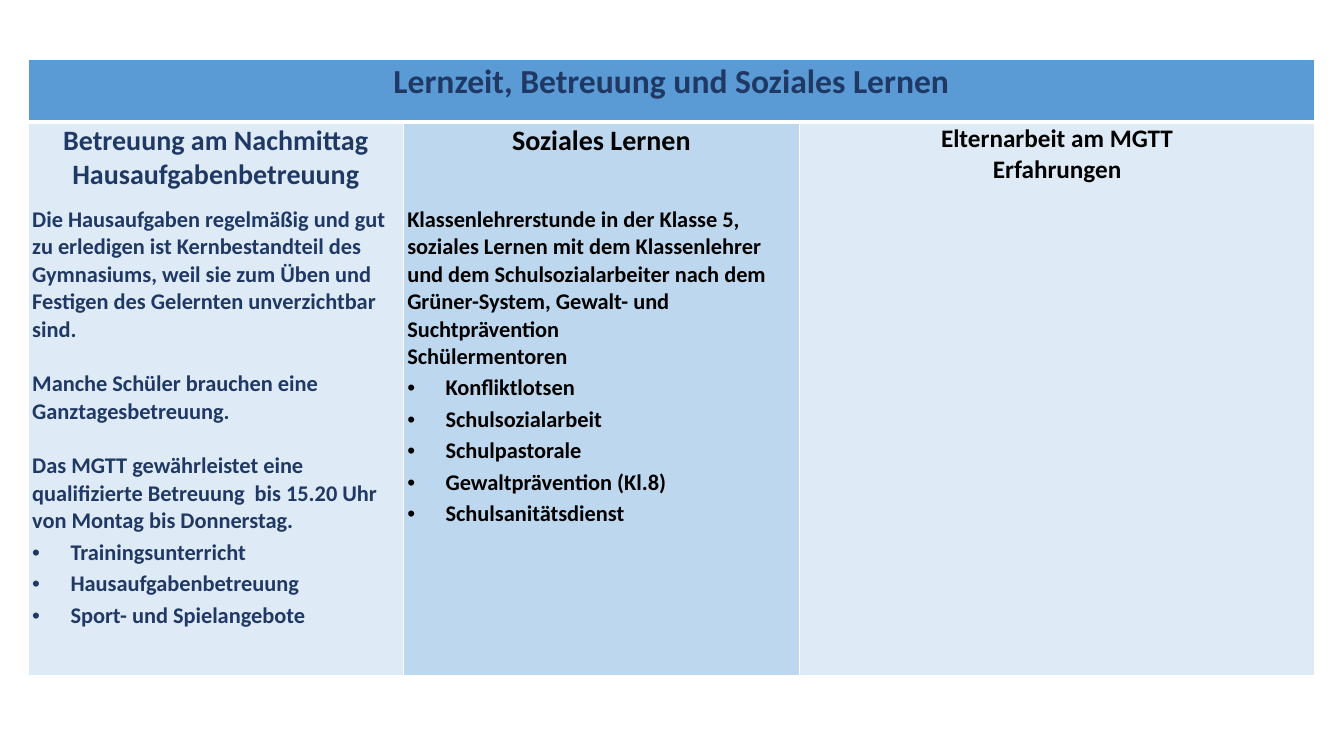
from lxml import etree
from pptx import Presentation
from pptx import util as u
from pptx.dml import color
from pptx.enum import text
from pptx.oxml import ns

WIDTH, HEIGHT = 13.33, 7.5
TABLE_BOX = (0.28, 0.59, 12.76, 6.11)
COLUMNS = (3.72, 3.93, 5.11)
ROWS = (0.62, 5.49)
NAVY, BLACK, WHITE = "203864", "000000", "FFFFFF"
HEADER_BLUE, PALE_BLUE, MID_BLUE = "5B9BD5", "DEEBF7", "BDD7EE"
BODY_LINE = 19.5

TITLE = "Lernzeit, Betreuung und Soziales Lernen"
TOPICS = [
    {
        "fill": PALE_BLUE, "color": NAVY, "size": 20,
        "headings": ["Betreuung am Nachmittag Hausaufgabenbetreuung"],
        "body": [
            ("Die Hausaufgaben regelmäßig und gut zu erledigen ist Kernbestandteil des "
             "Gymnasiums, weil sie zum Üben und Festigen des Gelernten unverzichtbar sind.", 9.8),
            ("Manche Schüler brauchen eine Ganztagesbetreuung.", BODY_LINE),
            ("Das MGTT gewährleistet eine qualifizierte Betreuung  bis 15.20 Uhr "
             "von Montag bis Donnerstag.", BODY_LINE),
        ],
        "bullets": ["Trainingsunterricht", "Hausaufgabenbetreuung", "Sport- und Spielangebote"],
    },
    {
        "fill": MID_BLUE, "color": BLACK, "size": 20,
        "headings": ["Soziales Lernen"],
        "body": [
            ("Klassenlehrerstunde in der Klasse 5, soziales Lernen mit dem Klassenlehrer und dem "
             "Schulsozialarbeiter nach dem Grüner-System, Gewalt- und Suchtprävention", 34.2),
            ("Schülermentoren", 0),
        ],
        "bullets": ["Konfliktlotsen", "Schulsozialarbeit", "Schulpastorale",
                    "Gewaltprävention (Kl.8)", "Schulsanitätsdienst"],
    },
    {
        "fill": PALE_BLUE, "color": BLACK, "size": 18,
        "headings": ["Elternarbeit am MGTT", "Erfahrungen"],
        "body": [],
        "bullets": [],
    },
]


def rgb(value):
    """Turn a hex string into a colour."""
    return color.RGBColor.from_string(value)


def write(frame, content, size=16, fill=NAVY, centered=False, before=0, bullet=False):
    """Add one bold paragraph to a text frame, using the first one while it is empty."""
    first = frame.paragraphs[0]
    paragraph = frame.add_paragraph() if first.runs else first
    paragraph.alignment = text.PP_ALIGN.CENTER if centered else text.PP_ALIGN.LEFT
    paragraph.space_before = u.Pt(before)
    run = paragraph.add_run()
    run.text = content
    run.font.name = "Calibri"
    run.font.size = u.Pt(size)
    run.font.bold = True
    run.font.color.rgb = rgb(fill)
    if bullet:
        paragraph.line_spacing = 1.15
        properties = paragraph._p.get_or_add_pPr()
        properties.set("marL", str(u.Inches(0.38)))
        properties.set("indent", str(-u.Inches(0.38)))
        etree.SubElement(properties, ns.qn("a:buFont")).set("typeface", "Arial")
        etree.SubElement(properties, ns.qn("a:buChar")).set("char", "•")


def style_cell(cell, fill, top=1, bottom=1):
    """Give a cell its margins, white borders and fill."""
    cell.margin_left = cell.margin_right = u.Inches(0.04)
    cell.margin_top, cell.margin_bottom = u.Inches(0.02), 0
    properties = cell._tc.get_or_add_tcPr()
    for side, width in (("L", 1), ("R", 1), ("T", top), ("B", bottom)):
        line = etree.SubElement(properties, ns.qn(f"a:ln{side}"), w=str(u.Pt(width)))
        solid = etree.SubElement(line, ns.qn("a:solidFill"))
        etree.SubElement(solid, ns.qn("a:srgbClr"), val=WHITE)
    cell.fill.solid()
    cell.fill.fore_color.rgb = rgb(fill)


def fill_header(table):
    """Merge the top row and write the title in it."""
    cells = [table.cell(0, column) for column in range(len(COLUMNS))]
    for cell in cells:
        style_cell(cell, HEADER_BLUE, bottom=3)
    cells[0].merge(cells[-1])
    write(cells[0].text_frame, TITLE, size=24, centered=True)


def fill_topic(cell, topic):
    """Write the headings, body and bullets of one topic."""
    style_cell(cell, topic["fill"], top=3)
    frame = cell.text_frame
    for heading in topic["headings"]:
        write(frame, heading, size=topic["size"], fill=topic["color"], centered=True)
    for content, before in topic["body"]:
        write(frame, content, fill=topic["color"], before=before)
    for content in topic["bullets"]:
        write(frame, content, fill=topic["color"], bullet=True)


def add_topic_table(slide, box):
    """Place the topic table in the given box."""
    frame = slide.shapes.add_table(len(ROWS), len(COLUMNS), *map(u.Inches, box))
    table = frame.table
    table.first_row = table.horz_banding = False
    for column, width in zip(table.columns, COLUMNS):
        column.width = u.Inches(box[2] * width / sum(COLUMNS))
    for row, height in zip(table.rows, ROWS):
        row.height = u.Inches(box[3] * height / sum(ROWS))
    fill_header(table)
    for index, topic in enumerate(TOPICS):
        fill_topic(table.cell(1, index), topic)


def main():
    """Build and save the presentation."""
    presentation = Presentation()
    presentation.slide_width = u.Inches(WIDTH)
    presentation.slide_height = u.Inches(HEIGHT)
    slide = presentation.slides.add_slide(presentation.slide_layouts[6])
    add_topic_table(slide, TABLE_BOX)
    presentation.save("out.pptx")


if __name__ == "__main__":
    main()
